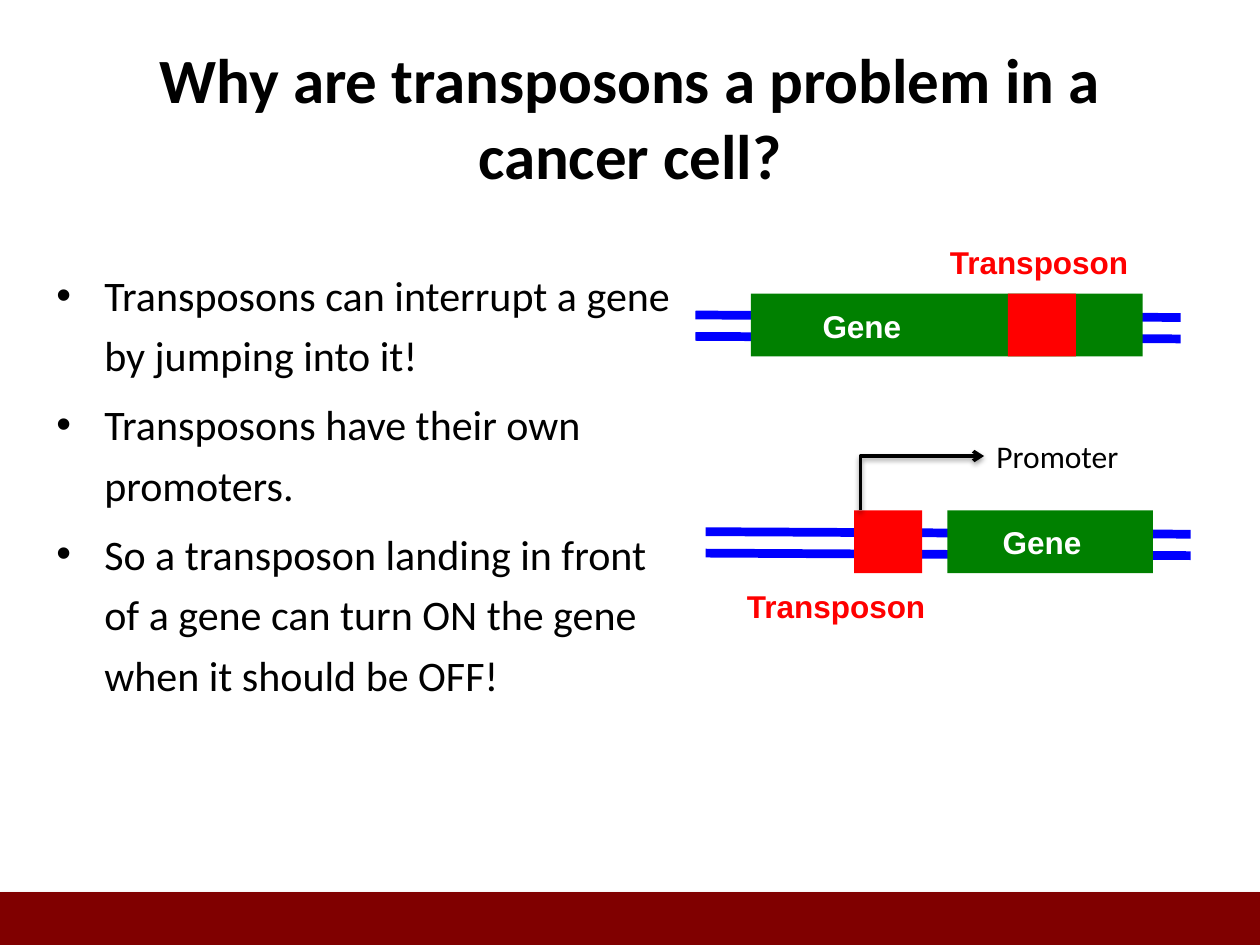
from lxml.etree import SubElement
from pptx import Presentation
from pptx.dml.color import RGBColor
from pptx.enum.shapes import MSO_CONNECTOR as Link, MSO_SHAPE as Shape
from pptx.enum.text import MSO_ANCHOR as Anchor, MSO_AUTO_SIZE as Fit, PP_ALIGN as Align
from pptx.oxml.ns import qn
from pptx.util import Inches, Pt

BLACK = RGBColor(0, 0, 0)
WHITE = RGBColor(255, 255, 255)
RED = RGBColor(255, 0, 0)
GREEN = RGBColor(0, 128, 0)
BLUE = RGBColor(0, 0, 255)
MAROON = RGBColor(128, 0, 0)

TITLE = "Why are transposons a problem in a cancer cell?"
BULLETS = [
    "Transposons can interrupt a gene by jumping into it!",
    "Transposons have their own promoters.",
    "So a transposon landing in front of a gene can turn ON the gene when it should be OFF!",
]
TITLE_FONT = {"name": "Calibri", "size": Pt(36), "bold": True}
BODY_FONT = {"name": "Calibri", "size": Pt(24)}
LABEL_FONT = {"name": "Arial", "size": Pt(18), "bold": True}
PROMOTER_FONT = {"name": "Calibri", "size": Pt(18)}

BLOCK_HEIGHT = 0.5
TRANSPOSON_WIDTH = 0.54
STRAND_LENGTH, STRAND_DROP = 3.85, 0.02
STRAND_OFFSETS = (0.17, 0.34)
GENES = [
    {"top": 2.33, "strand": 5.52, "gene": (5.96, 3.11), "transposon": 8.0,
     "gene_label": (6.43, 2.39), "transposon_label": (7.44, 1.88)},
    {"top": 4.05, "strand": 5.6, "gene": (7.52, 1.63), "transposon": 6.78,
     "gene_label": (7.86, 4.1), "transposon_label": (5.83, 4.61)},
]
PROMOTER_START, PROMOTER_END = (6.83, 4.05), (7.81, 3.62)


def set_format(target, values):
    for name, value in values.items():
        setattr(target, name, value)


def add_effects(shape, alpha=None, distance=0):
    effects = SubElement(shape._element.spPr, qn("a:effectLst"))
    if alpha:
        shadow = SubElement(effects, qn("a:outerShdw"), blurRad=str(Pt(3.1)),
                            dist=str(Pt(distance)), dir="5400000", rotWithShape="0")
        color = SubElement(shadow, qn("a:srgbClr"), val=str(BLACK))
        SubElement(color, qn("a:alpha"), val=str(alpha * 1000))


def add_block(page, left, top, width, height, color):
    block = page.shapes.add_shape(Shape.RECTANGLE, *map(Inches, (left, top, width, height)))
    block.fill.solid()
    block.fill.fore_color.rgb = color
    block.line.fill.background()
    block.shadow.inherit = False
    return block


def add_line(page, kind, start, end, color, width):
    line = page.shapes.add_connector(kind, *map(Inches, start + end))
    line.line.color.rgb = color
    line.line.width = Pt(width)
    return line


def add_text(page, place, texts, font, color, frame_format, para_format):
    box = page.shapes.add_textbox(*map(Inches, place))
    frame = box.text_frame
    set_format(frame, frame_format)
    for index, text in enumerate(texts):
        para = frame.add_paragraph() if index else frame.paragraphs[0]
        set_format(para, para_format)
        span = para.add_run()
        span.text = text
        set_format(span.font, font)
        span.font.color.rgb = color
    return box


def add_label(page, position, width, text, font, color):
    add_text(page, position + (width, 0.4), [text], font, color,
             {"word_wrap": False, "auto_size": Fit.SHAPE_TO_FIT_TEXT}, {})


def add_bullets(page):
    box = add_text(page, (0.35, 2.01, 5.17, 3.05), BULLETS, BODY_FONT, BLACK,
                   {"word_wrap": True},
                   {"line_spacing": 1.2, "space_before": Pt(4.8)})
    for para in box.text_frame.paragraphs:
        properties = para._p.get_or_add_pPr()
        properties.set("marL", str(Inches(0.38)))
        properties.set("indent", str(Inches(-0.38)))
        SubElement(properties, qn("a:buFont"), typeface="Arial")
        SubElement(properties, qn("a:buChar"), char="•")


def add_gene(page, gene):
    top, left = gene["top"], gene["strand"]
    for offset in STRAND_OFFSETS:
        y = top + offset
        strand = add_line(page, Link.STRAIGHT, (left, y),
                          (left + STRAND_LENGTH, y + STRAND_DROP), BLUE, 5)
        add_effects(strand)
    gene_left, gene_width = gene["gene"]
    add_block(page, gene_left, top, gene_width, BLOCK_HEIGHT, GREEN)
    add_block(page, gene["transposon"], top, TRANSPOSON_WIDTH, BLOCK_HEIGHT, RED)
    add_label(page, gene["gene_label"], 0.83, "Gene", LABEL_FONT, WHITE)
    add_label(page, gene["transposon_label"], 1.63, "Transposon", LABEL_FONT, RED)


def add_promoter(page):
    (x1, y1), (x2, y2) = PROMOTER_START, PROMOTER_END
    middle_x, middle_y = (x1 + x2) / 2, (y1 + y2) / 2
    half_width, half_height = (y1 - y2) / 2, (x2 - x1) / 2
    arrow = add_line(page, Link.ELBOW, (middle_x + half_width, middle_y + half_height),
                     (middle_x - half_width, middle_y - half_height), BLACK, 2)
    properties = arrow._element.spPr
    properties.find(qn("a:xfrm")).set("rot", "5400000")
    properties.find(qn("a:prstGeom")).set("prst", "bentConnector2")
    SubElement(properties.find(qn("a:ln")), qn("a:tailEnd"), type="arrow")
    add_effects(arrow, 38, 1.6)
    add_label(page, (x2, 3.42), 1.19, "Promoter", PROMOTER_FONT, BLACK)


def main():
    deck = Presentation()
    deck.slide_width, deck.slide_height = Inches(10), Inches(7.5)
    page = deck.slides.add_slide(deck.slide_layouts[6])
    footer = add_block(page, 0, 7.08, 10, 0.42, MAROON)
    footer._element.spPr.remove(footer._element.spPr.find(qn("a:effectLst")))
    add_effects(footer, 35, 1.8)
    add_bullets(page)
    for gene in GENES:
        add_gene(page, gene)
    add_text(page, (0.5, 0.3, 9, 1.25), [TITLE], TITLE_FONT, BLACK,
             {"word_wrap": True, "vertical_anchor": Anchor.MIDDLE},
             {"alignment": Align.CENTER})
    add_promoter(page)
    deck.save("out.pptx")


if __name__ == "__main__":
    main()
